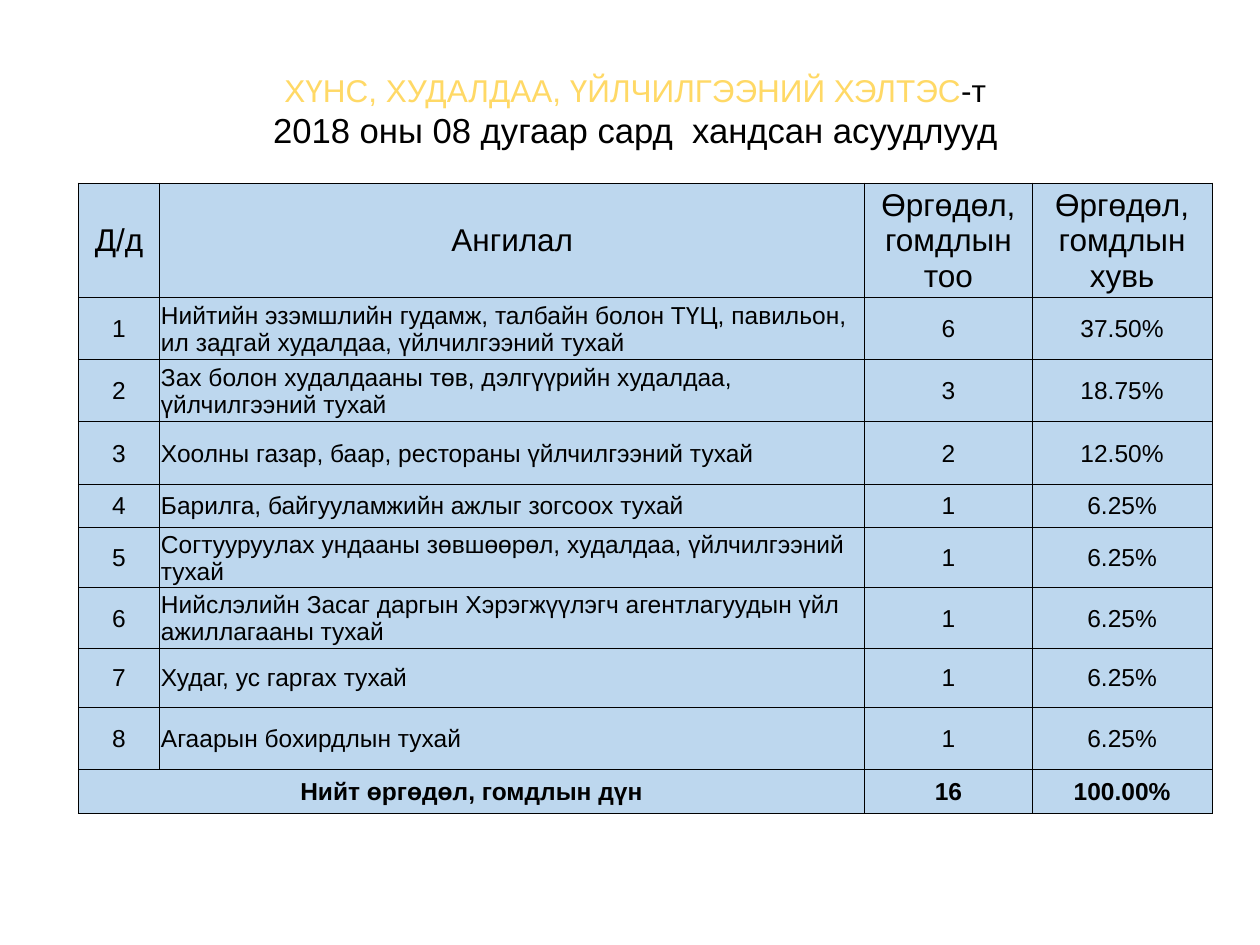
from lxml import etree
from pptx import Presentation
from pptx.dml.color import RGBColor
from pptx.enum.text import MSO_ANCHOR, PP_ALIGN
from pptx.oxml.ns import qn
from pptx.util import Pt

CENTER, LEFT = PP_ALIGN.CENTER, PP_ALIGN.LEFT
MIDDLE = MSO_ANCHOR.MIDDLE
BLACK = RGBColor(0x00, 0x00, 0x00)
GOLD = RGBColor(0xFF, 0xD9, 0x66)
LIGHT_BLUE = RGBColor(0xBD, 0xD7, 0xEE)
FONT = "Arial"


def style_run(r, size, color=BLACK, bold=False):
    r.font.name = FONT
    r.font.size = Pt(size)
    r.font.color.rgb = color
    r.font.bold = bold


def add_borders(cell):
    tcPr = cell._tc.get_or_add_tcPr()
    for i, side in enumerate(("a:lnL", "a:lnR", "a:lnT", "a:lnB")):
        ln = etree.Element(qn(side), w=str(Pt(0.5)))
        fill = etree.SubElement(ln, qn("a:solidFill"))
        etree.SubElement(fill, qn("a:srgbClr"), val=str(BLACK))
        tcPr.insert(i, ln)


prs = Presentation()
prs.slide_width, prs.slide_height = Pt(720), Pt(540)
s = prs.slides.add_slide(prs.slide_layouts[6])

# Title
title_lines = [
    [("ХҮНС, ХУДАЛДАА, ҮЙЛЧИЛГЭЭНИЙ ХЭЛТЭС", 18, GOLD), ("-т", 18, BLACK)],
    [("2018 оны 08 дугаар сард  хандсан асуудлууд", 19.8, BLACK)],
]
tf = s.shapes.add_textbox(Pt(58), Pt(40), Pt(610), Pt(47)).text_frame
tf.word_wrap = True
tf.vertical_anchor = MIDDLE
tf.margin_top = tf.margin_bottom = 0
for i, line in enumerate(title_lines):
    p = tf.paragraphs[0] if i == 0 else tf.add_paragraph()
    p.alignment = CENTER
    for text, size, color in line:
        r = p.add_run()
        r.text = text
        style_run(r, size, color)

# Table contents
header = ("Д/д", "Ангилал", "Өргөдөл, гомдлын тоо", "Өргөдөл, гомдлын хувь")
topics = [
    ("Нийтийн эзэмшлийн гудамж, талбайн болон ТҮЦ, павильон, "
     "ил задгай худалдаа, үйлчилгээний тухай", "6", "37.50%"),
    ("Зах болон худалдааны төв, дэлгүүрийн худалдаа, үйлчилгээний тухай",
     "3", "18.75%"),
    ("Хоолны газар, баар, рестораны үйлчилгээний тухай", "2", "12.50%"),
    ("Барилга, байгууламжийн ажлыг зогсоох тухай", "1", "6.25%"),
    ("Согтууруулах ундааны зөвшөөрөл, худалдаа, үйлчилгээний тухай",
     "1", "6.25%"),
    ("Нийслэлийн Засаг даргын Хэрэгжүүлэгч агентлагуудын үйл ажиллагааны тухай",
     "1", "6.25%"),
    ("Худаг, ус гаргах тухай", "1", "6.25%"),
    ("Агаарын бохирдлын тухай", "1", "6.25%"),
]
total = ("Нийт өргөдөл, гомдлын дүн", "", "16", "100.00%")
rows = [header] + [(str(n), *t) for n, t in enumerate(topics, 1)] + [total]
last = len(rows) - 1
col_widths = (46.5, 403, 95.5, 103)
row_heights = (47.5, 35.5, 35.5, 35.5, 25, 34, 34, 34, 35.5, 25)

# Table
table = s.shapes.add_table(len(rows), len(col_widths), Pt(44.75), Pt(104.5),
                           Pt(sum(col_widths)), Pt(sum(row_heights))).table
for column, width in zip(table.columns, col_widths):
    column.width = Pt(width)
for row, height in zip(table.rows, row_heights):
    row.height = Pt(height)
table.cell(last, 0).merge(table.cell(last, 1))

for i, row in enumerate(rows):
    for j, text in enumerate(row):
        cell = table.cell(i, j)
        cell.fill.solid()
        cell.fill.fore_color.rgb = LIGHT_BLUE
        add_borders(cell)
        cell.vertical_anchor = MIDDLE
        cell.margin_left = cell.margin_right = cell.margin_top = Pt(0.75)
        cell.margin_bottom = 0
        if cell.is_spanned:
            continue
        cell.text_frame.text = text
        p = cell.text_frame.paragraphs[0]
        p.alignment = LEFT if j == 1 and 0 < i < last else CENTER
        style_run(p.runs[0], 18 if i == 0 else 14, bold=i == last)

prs.save("out.pptx")
